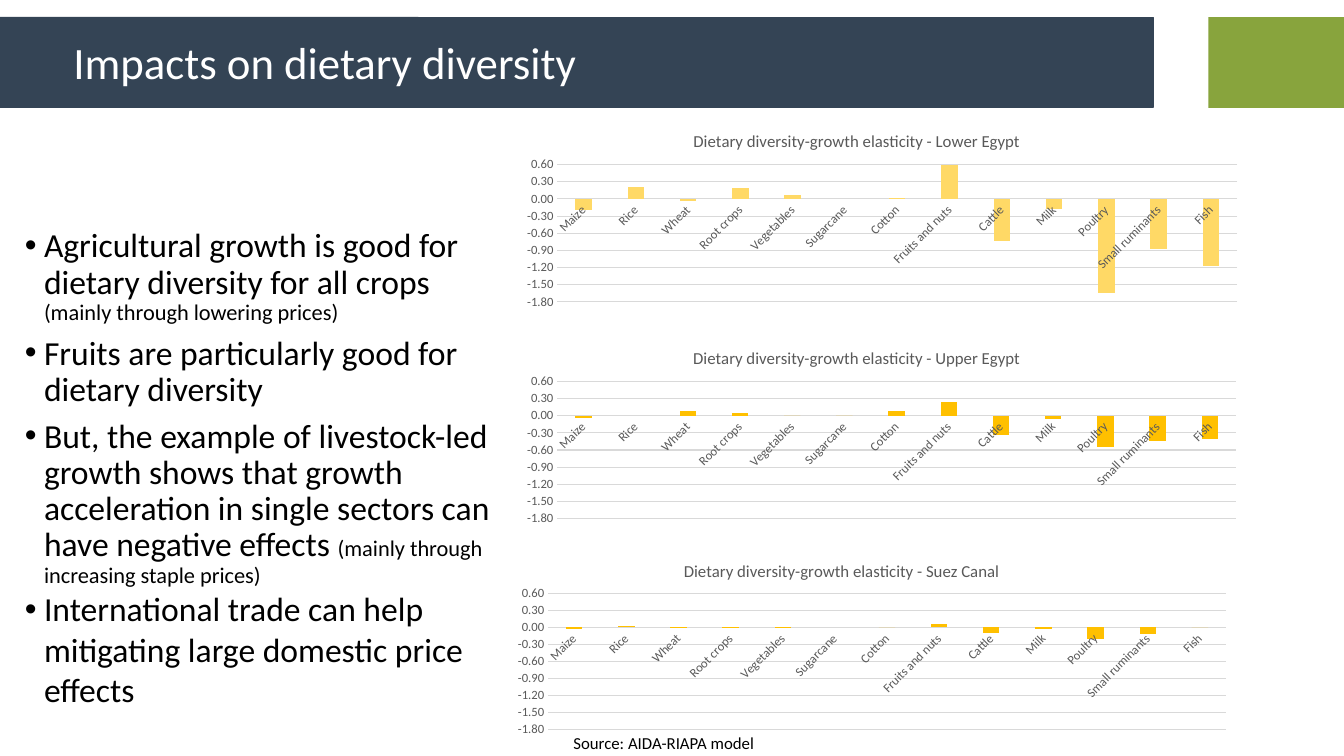
from lxml import etree
from pptx import Presentation
from pptx.chart.data import CategoryChartData as ChartData
from pptx.dml.color import RGBColor
from pptx.enum.chart import XL_CHART_TYPE as Kind, XL_TICK_MARK as Tick
from pptx.enum.shapes import MSO_SHAPE as Shape
from pptx.enum.text import MSO_ANCHOR as Anchor, MSO_AUTO_SIZE as Fit
from pptx.oxml.ns import qn
from pptx.util import Cm, Pt

NAVY = RGBColor(0x34, 0x44, 0x55)
GREEN = RGBColor(0x88, 0xA4, 0x3D)
WHITE = RGBColor(0xFF, 0xFF, 0xFF)
BLACK = RGBColor(0, 0, 0)
GREY = RGBColor(0x59, 0x59, 0x59)
PALE = RGBColor(0xD9, 0xD9, 0xD9)
SAND = RGBColor(0xFF, 0xD9, 0x66)
GOLD = RGBColor(0xFF, 0xC0, 0x00)
FACE = "Calibri"
LOW, STEP = -1.8, 0.3

FOODS = ["Maize", "Rice", "Wheat", "Root crops", "Vegetables", "Sugarcane", "Cotton",
         "Fruits and nuts", "Cattle", "Milk", "Poultry", "Small ruminants", "Fish"]
REGIONS = [
    ("Lower Egypt", (12.93, 2.79, 18.62, 5.13), SAND, 0.6,
     [-0.2, 0.21, -0.03, 0.19, 0.06, None, 0.01, 0.75, -0.74, -0.17, -1.65, -0.88, -1.18]),
    ("Upper Egypt", (12.93, 8.25, 18.59, 5.13), GOLD, 0.7,
     [-0.04, None, 0.08, 0.05, 0, 0, 0.09, 0.24, -0.33, -0.06, -0.55, -0.44, -0.41]),
    ("Suez Canal", (12.7, 13.61, 18.57, 5.08), GOLD, 0.6,
     [-0.02, 0.02, -0.01, 0.01, 0.01, None, 0, 0.07, -0.1, -0.02, -0.2, -0.12, 0]),
]
POINTS = [
    [("Agricultural growth is good for dietary diversity for all crops ", 24),
     ("(mainly through lowering prices)", 16)],
    [("Fruits are particularly good for dietary diversity", 24)],
    [("But, the example of livestock-led growth shows that growth acceleration in single "
      "sectors can have negative effects ", 24),
     ("(mainly through increasing staple prices)", 16)],
    [("International trade can help mitigating large domestic price effects", 24)],
]


def style(font, size, color):
    """Set the face, size and colour of a font."""
    font.name = FACE
    font.color.rgb = color
    if size:
        font.size = Pt(size)


def add_bar(slide, box, color, bend):
    """Add a plain header bar."""
    bar = slide.shapes.add_shape(Shape.ROUNDED_RECTANGLE, *map(Cm, box))
    bar.adjustments[0] = bend
    bar.shadow.inherit = False
    bar.fill.solid()
    bar.fill.fore_color.rgb = color
    bar.line.fill.background()


def add_text(slide, box, text, size, color, wrap=True):
    """Add a one-paragraph text box and return its frame."""
    frame = slide.shapes.add_textbox(*map(Cm, box)).text_frame
    frame.word_wrap = wrap
    para = frame.paragraphs[0]
    para.text = text
    style(para.font, size, color)
    return frame


def add_points(slide, box):
    """Add the bulleted list of findings."""
    frame = slide.shapes.add_textbox(*map(Cm, box)).text_frame
    frame.word_wrap = True
    last = len(POINTS) - 1
    for i, parts in enumerate(POINTS):
        para = frame.add_paragraph() if i else frame.paragraphs[0]
        props = para._p.get_or_add_pPr()
        props.set("marL", str(Cm(0.48)))
        props.set("indent", str(-Cm(0.48)))
        etree.SubElement(props, qn("a:buFont"), typeface="Arial")
        etree.SubElement(props, qn("a:buChar"), char="•")
        if i < last:
            para.line_spacing = 0.9
        if 0 < i < last:
            para.space_before = Pt(7.5)
        style(para.font, None, BLACK)
        for text, size in parts:
            run = para.add_run()
            run.text = text
            run.font.size = Pt(size)


def place(node, spot, **sizes):
    """Give a chart part a fixed layout at a child index."""
    for old in node.findall(qn("c:layout")):
        node.remove(old)
    layout = etree.Element(qn("c:layout"))
    node.insert(spot, layout)
    manual = etree.SubElement(layout, qn("c:manualLayout"))
    if "w" in sizes:
        etree.SubElement(manual, qn("c:layoutTarget"), val="inner")
    for key in "xy":
        etree.SubElement(manual, qn(f"c:{key}Mode"), val="edge")
    for key, size in sizes.items():
        etree.SubElement(manual, qn(f"c:{key}"), val=f"{size:.3f}")


def add_plot(slide, region, box, color, top, vals):
    """Add the column chart of one region."""
    data = ChartData(number_format="0.00")
    data.categories = FOODS
    data.add_series("Series 1", vals)
    chart = slide.shapes.add_chart(Kind.COLUMN_CLUSTERED, *map(Cm, box), data).chart
    style(chart.font, 10, BLACK)
    chart.has_legend = False

    chart.has_title = True
    head = chart.chart_title.text_frame.paragraphs[0]
    run = head.add_run()
    run.text = f"Dietary diversity-growth elasticity - {region}"
    style(run.font, 12, GREY)
    run.font.bold = False
    place(chart.chart_title._element, 1, x=0.24, y=0.08)

    tall = 0.675 * (top - LOW) / 2.4
    area = chart._chartSpace.chart.plotArea
    place(area, 0, x=0.06, y=0.94 - tall, w=0.92, h=tall)

    plot = chart.plots[0]
    plot.vary_by_categories = False
    plot.gap_width = 219
    plot.overlap = -27
    bars = plot.series[0]
    bars.invert_if_negative = False
    bars.format.fill.solid()
    bars.format.fill.fore_color.rgb = color

    foods, scale = chart.category_axis, chart.value_axis
    for axis in (foods, scale):
        axis.major_tick_mark = axis.minor_tick_mark = Tick.NONE
        style(axis.tick_labels.font, 9, GREY)
    foods._element.find(f"{qn('c:txPr')}/{qn('a:bodyPr')}").set("rot", "-2700000")
    scale.minimum_scale, scale.maximum_scale, scale.major_unit = LOW, top, STEP
    scale.tick_labels.number_format = "0.00"
    scale.tick_labels.number_format_is_linked = False
    scale.format.line.fill.background()
    scale.has_major_gridlines = True
    for line in (foods.format.line, scale.major_gridlines.format.line):
        line.color.rgb = PALE
        line.width = Pt(0.75)


def main():
    """Build the slide and save it."""
    deck = Presentation()
    deck.slide_width, deck.slide_height = Cm(33.87), Cm(19.05)
    slide = deck.slides.add_slide(deck.slide_layouts[6])
    add_bar(slide, (-0.56, 0.43, 29.64, 2.29), NAVY, 0.01)
    add_bar(slide, (30.45, 0.43, 4.27, 2.29), GREEN, 0)
    title = add_text(slide, (1.6, 0, 26.59, 3.3), "Impacts on dietary diversity", 32, WHITE)
    title.vertical_anchor = Anchor.MIDDLE
    title.paragraphs[0].line_spacing = 0.9
    add_points(slide, (0.38, 5.64, 12.32, 13.82))
    for region in REGIONS:
        add_plot(slide, *region)
    source = add_text(slide, (14.2, 18.34, 5.13, 0.76), "Source: AIDA-RIAPA model",
                      12, BLACK, wrap=False)
    source.auto_size = Fit.SHAPE_TO_FIT_TEXT
    deck.save("out.pptx")


if __name__ == "__main__":
    main()
